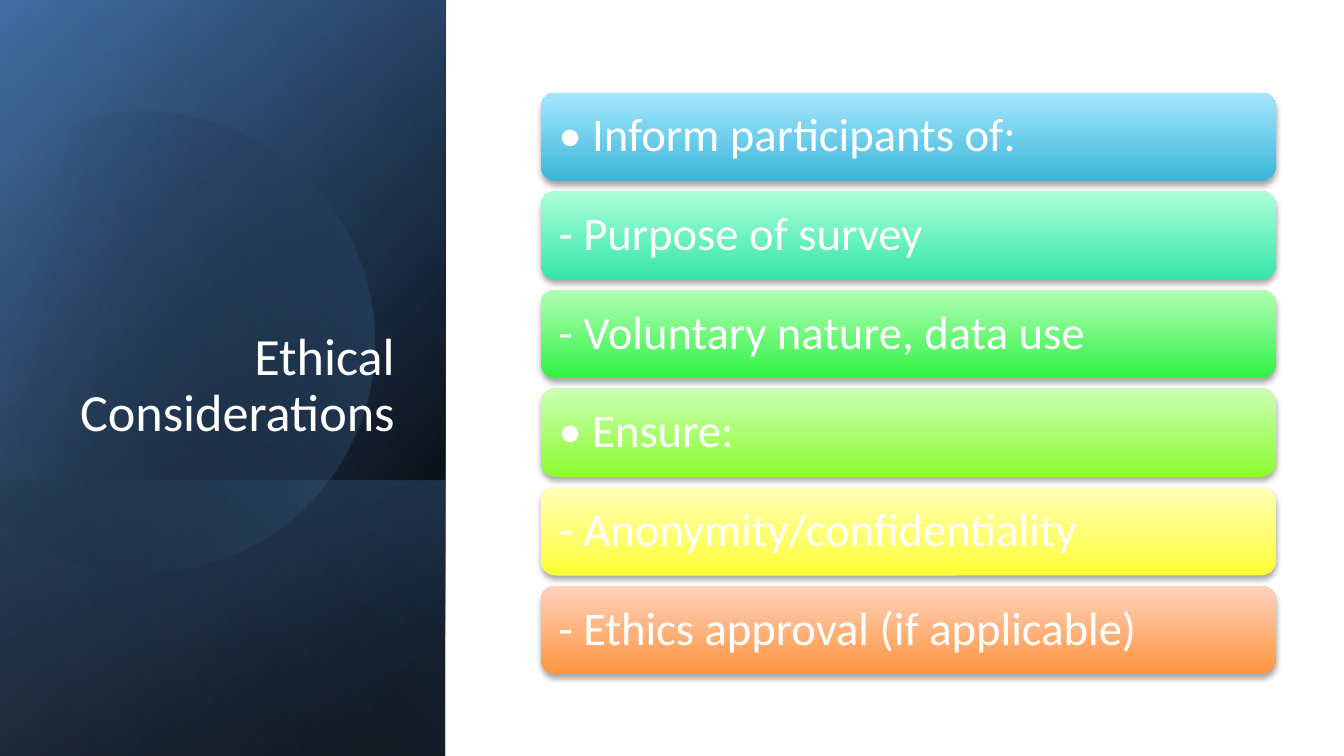
from math import cos, radians, sin, tan

from lxml.etree import SubElement
from pptx import Presentation
from pptx.dml.color import RGBColor
from pptx.enum.shapes import MSO_SHAPE
from pptx.enum.text import MSO_ANCHOR, PP_ALIGN
from pptx.oxml.ns import qn
from pptx.util import Pt

WHITE = RGBColor(0xFF, 0xFF, 0xFF)
BLACK = RGBColor(0x00, 0x00, 0x00)
BLUE = RGBColor(0x4F, 0x81, 0xBD)
DARK_BLUE = RGBColor(0x37, 0x60, 0x92)
PALE_BLUE = RGBColor(0x95, 0xB3, 0xD7)

# Text, lower colour and upper colour of each bar
POINTS = [
    ("• Inform participants of:", RGBColor(0x39, 0xB7, 0xD8), RGBColor(0xA7, 0xE6, 0xFF)),
    ("- Purpose of survey", RGBColor(0x34, 0xE6, 0xA9), RGBColor(0xAC, 0xFF, 0xD9)),
    ("- Voluntary nature, data use", RGBColor(0x31, 0xF2, 0x45), RGBColor(0xB0, 0xFF, 0xB4)),
    ("• Ensure:", RGBColor(0x8A, 0xFD, 0x2E), RGBColor(0xCC, 0xFF, 0xB4)),
    ("- Anonymity/confidentiality", RGBColor(0xFE, 0xFF, 0x35), RGBColor(0xFF, 0xFF, 0xB9)),
    ("- Ethics approval (if applicable)", RGBColor(0xFF, 0x95, 0x3E), RGBColor(0xFF, 0xD2, 0xBD)),
]


def add_colour(parent, colour, alpha):
    node = SubElement(parent, qn("a:srgbClr"), val=str(colour))
    if alpha < 100:
        SubElement(node, qn("a:alpha"), val=str(alpha * 1000))


def paint(shape, stops, angle):
    """Fill with a gradient of (position, colour, alpha) stops, without line or shadow."""
    properties = shape.fill._xPr
    gradient = SubElement(properties, qn("a:gradFill"), rotWithShape="1")
    properties.insert(2, gradient)
    stop_list = SubElement(gradient, qn("a:gsLst"))
    for position, colour, alpha in stops:
        stop = SubElement(stop_list, qn("a:gs"), pos=str(position * 1000))
        add_colour(stop, colour, alpha)
    SubElement(gradient, qn("a:lin"), ang=str(angle * 60000), scaled="0")
    shape.line.fill.background()
    shape.shadow.inherit = False


def add_soft_shadow(shape):
    effects = shape.fill._xPr.find(qn("a:effectLst"))
    shadow = SubElement(effects, qn("a:outerShdw"), blurRad=str(Pt(3.1)), dist=str(Pt(1.8)),
                        dir="5400000", rotWithShape="0")
    add_colour(shadow, BLACK, 35)


def add_text(slide, text, left, top, width, height, size, align=PP_ALIGN.LEFT,
             anchor=MSO_ANCHOR.MIDDLE, inset_y=7.2):
    box = slide.shapes.add_textbox(Pt(left), Pt(top), Pt(width), Pt(height))
    frame = box.text_frame
    frame.word_wrap = True
    frame.vertical_anchor = anchor
    frame.margin_left = frame.margin_right = Pt(7.2)
    frame.margin_top = frame.margin_bottom = Pt(inset_y)
    paragraph = frame.paragraphs[0]
    paragraph.alignment = align
    paragraph.line_spacing = 0.9
    run = paragraph.add_run()
    run.text = text
    run.font.name = "Calibri"
    run.font.size = Pt(size)
    run.font.color.rgb = WHITE


def add_turned_panel(slide, left, top, width, height, stops, angle):
    """Cover the given box with a mirrored rectangle turned by 90 degrees."""
    shift = (width - height) / 2
    panel = slide.shapes.add_shape(MSO_SHAPE.RECTANGLE, Pt(left + shift), Pt(top - shift),
                                   Pt(height), Pt(width))
    panel.rotation = 90
    panel.fill._xPr.find(qn("a:xfrm")).set("flipH", "1")
    paint(panel, stops, angle)


def curve_lines(shape):
    """Turn every three line segments into one cubic curve."""
    lines = list(shape._element.iter(qn("a:lnTo")))
    for first, second, third in zip(lines[::3], lines[1::3], lines[2::3]):
        outline = first.getparent()
        curve = SubElement(outline, qn("a:cubicBezTo"))
        outline.replace(first, curve)
        for line in (first, second, third):
            curve.append(line[0])
        outline.remove(second)
        outline.remove(third)


def add_cut_disc(slide, centre_x, centre_y, radius, tilt, half_cut):
    """Draw a disc whose left side is cut straight, turned by the tilt."""

    def rim_point(angle, along=0):
        a = radians(angle)
        return (Pt(centre_x + radius * (cos(a) - along * sin(a))),
                Pt(centre_y + radius * (sin(a) + along * cos(a))))

    # Curves meet at the top, right and bottom of the disc
    angles = [half_cut - 180 + tilt, -90, 0, 90, 180 - half_cut + tilt]
    vertices = []
    for start, end in zip(angles, angles[1:]):
        handle = 4 / 3 * tan(radians(end - start) / 4)
        vertices += [rim_point(start, handle), rim_point(end, -handle), rim_point(end)]
    builder = slide.shapes.build_freeform(*rim_point(angles[0]))
    builder.add_line_segments(vertices, close=True)
    disc = builder.convert_to_shape()
    curve_lines(disc)
    disc.rotation = -tilt
    paint(disc, [(29, BLACK, 0), (100, BLUE, 43)], 30)


def add_title_panel(slide, left, top, width, height):
    # Layered background
    box = (left, top, width, height)
    add_turned_panel(slide, *box, [(8, BLACK, 100), (100, DARK_BLUE, 100)], 50)
    add_turned_panel(slide, *box, [(0, BLACK, 0), (99, BLUE, 46)], 30)
    band = 147.6
    add_turned_panel(slide, left, top + height - band, width, band,
                     [(2, BLUE, 29), (100, BLACK, 30)], 130)
    add_cut_disc(slide, left + 76.9, top + 180.8, 123.5, tilt=16.1, half_cut=46.7)
    add_turned_panel(slide, *box, [(0, BLACK, 0), (99, PALE_BLUE, 11)], 120)

    # Title
    add_text(slide, "Ethical Considerations", left + 34.2, top + 99, 184.3, 141.8, size=28,
             align=PP_ALIGN.RIGHT, anchor=MSO_ANCHOR.BOTTOM, inset_y=3.6)


def add_point_bars(slide, left, top, width, height, gap=5.5, edge=2.3):
    bar_height = (height - gap * (len(POINTS) - 1)) / len(POINTS)
    for index, (text, lower, upper) in enumerate(POINTS):
        bar_top = top + index * (bar_height + gap)
        bar = slide.shapes.add_shape(MSO_SHAPE.ROUNDED_RECTANGLE, Pt(left), Pt(bar_top),
                                     Pt(width), Pt(bar_height))
        paint(bar, [(0, lower, 100), (100, upper, 100)], 270)
        add_soft_shadow(bar)
        add_text(slide, text, left + edge, bar_top + edge, width - 2 * edge,
                 bar_height - 2 * edge, size=25)


def main():
    deck = Presentation()
    deck.slide_width, deck.slide_height = Pt(720), Pt(405)
    slide = deck.slides.add_slide(deck.slide_layouts[6])
    add_title_panel(slide, 0, 0, 238.5, 405)
    add_point_bars(slide, 289.8, 49.6, 393.6, 311.6)
    deck.save("out.pptx")


if __name__ == "__main__":
    main()
